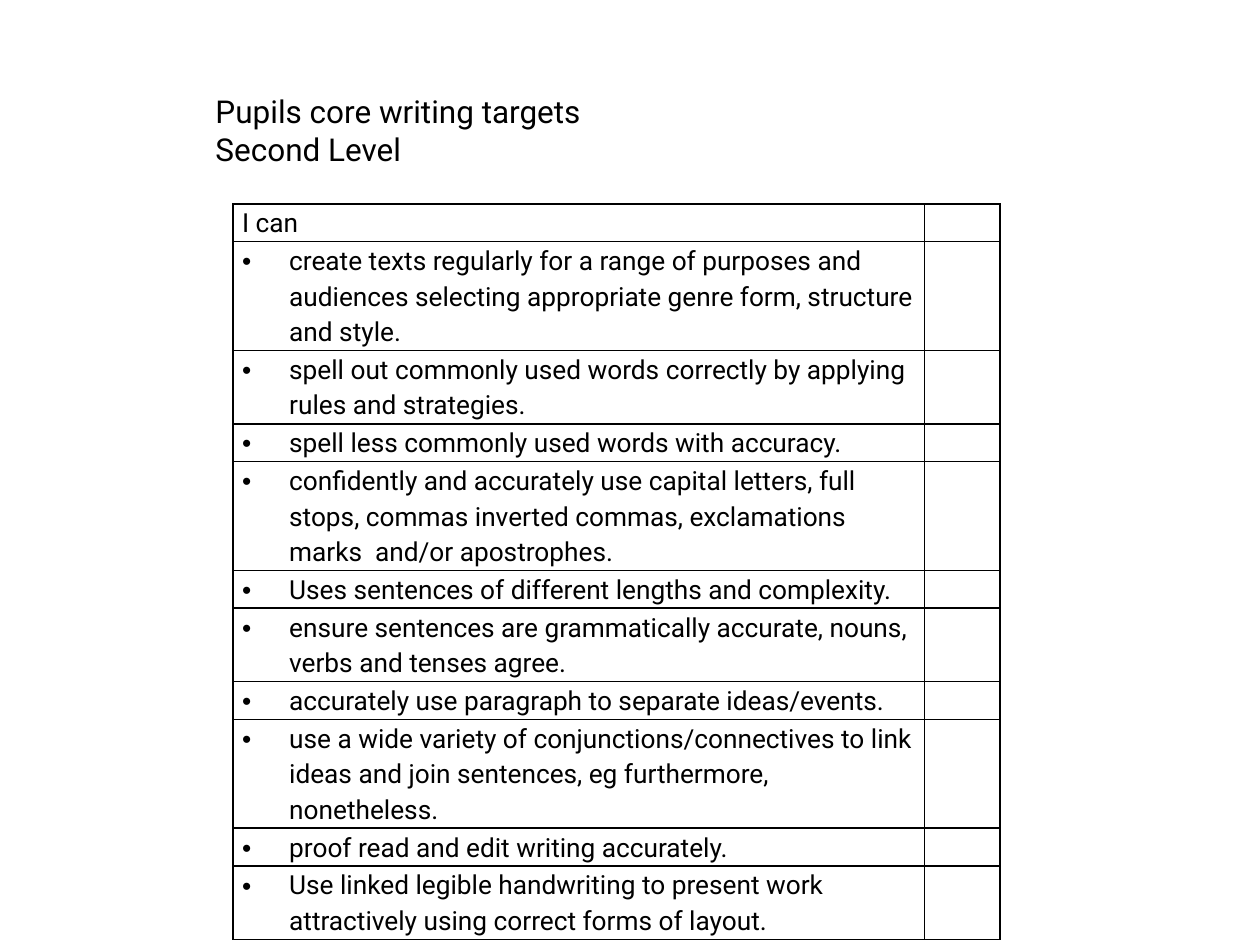
from lxml.etree import SubElement
from pptx import Presentation
from pptx.dml.color import RGBColor
from pptx.enum.text import MSO_ANCHOR, MSO_AUTO_SIZE, PP_ALIGN
from pptx.oxml.ns import qn
from pptx.util import Cm, Pt

COLOURS = {"ink": "000000", "border": "000000"}
FONT = "Roboto"
LINE_HEIGHT = 0.74
LINE_LENGTH = 55
COLUMN_WIDTHS = (13.94, 1.52)
INDENT = 0.95

TARGETS = [
    "create texts regularly for a range of purposes and audiences selecting "
    "appropriate genre form, structure and style.",
    "spell out commonly used words correctly by applying rules and strategies.",
    "spell less commonly used words with accuracy.",
    "confidently and accurately use capital letters, full stops, commas inverted "
    "commas, exclamations marks  and/or apostrophes.",
    "Uses sentences of different lengths and complexity.",
    "ensure sentences are grammatically accurate, nouns, verbs and tenses agree.",
    "accurately use paragraph to separate ideas/events.",
    "use a wide variety of conjunctions/connectives to link ideas and join "
    "sentences, eg furthermore, nonetheless.",
    "proof read and edit writing accurately.",
    "Use linked legible handwriting to present work attractively using correct "
    "forms of layout.",
]


def write(paragraph, text, size=15, spacing=1.0, bullet=None):
    """Fill a paragraph with one formatted run."""
    paragraph.alignment = PP_ALIGN.LEFT
    paragraph.line_spacing = spacing
    if bullet:
        properties = paragraph._p.get_or_add_pPr()
        properties.set("marL", str(Cm(INDENT)))
        properties.set("indent", str(-Cm(INDENT)))
        SubElement(properties, qn("a:buFont"), typeface="Arial")
        SubElement(properties, qn("a:buChar"), char=bullet)
    run = paragraph.add_run()
    run.text = text
    run.font.size = Pt(size)
    run.font.name = FONT
    run.font.color.rgb = RGBColor.from_string(COLOURS["ink"])


class TargetSheet:
    def __init__(self, slide, border_width=1):
        self.slide = slide
        self.border_width = border_width

    def title(self, lines, left, top, width, height):
        heading = self.slide.shapes.title
        heading.left, heading.top = Cm(left), Cm(top)
        heading.width, heading.height = Cm(width), Cm(height)
        frame = heading.text_frame
        frame.word_wrap = True
        frame.auto_size = MSO_AUTO_SIZE.SHAPE_TO_FIT_TEXT
        frame.vertical_anchor = MSO_ANCHOR.TOP
        for index, line in enumerate(lines):
            paragraph = frame.add_paragraph() if index else frame.paragraphs[0]
            write(paragraph, line, size=18)

    def format_cell(self, cell):
        cell.margin_left = cell.margin_right = Cm(0.18)
        cell.margin_top = cell.margin_bottom = 0
        properties = cell._tc.get_or_add_tcPr()
        for side in ("a:lnL", "a:lnR", "a:lnT", "a:lnB"):
            border = SubElement(properties, qn(side), w=str(Pt(self.border_width)))
            fill = SubElement(border, qn("a:solidFill"))
            SubElement(fill, qn("a:srgbClr"), val=COLOURS["border"])
        cell.fill.background()

    def checklist(self, header, targets, left, top):
        texts = [header, *targets]
        heights = [LINE_HEIGHT * (2 if len(text) > LINE_LENGTH else 1) for text in texts]
        table = self.slide.shapes.add_table(
            len(texts), len(COLUMN_WIDTHS), Cm(left), Cm(top),
            Cm(sum(COLUMN_WIDTHS)), Cm(sum(heights))).table
        table.first_row = table.horz_banding = False
        for column, width in zip(table.columns, COLUMN_WIDTHS):
            column.width = Cm(width)
        for index, (text, height) in enumerate(zip(texts, heights)):
            table.rows[index].height = Cm(height)
            write(table.cell(index, 0).text_frame.paragraphs[0], text,
                  spacing=1.15, bullet="•" if index else None)
        for cell in table.iter_cells():
            self.format_cell(cell)


def main():
    presentation = Presentation()
    presentation.slide_width, presentation.slide_height = Cm(25.4), Cm(19.05)
    sheet = TargetSheet(presentation.slides.add_slide(presentation.slide_layouts[5]))

    # Heading
    sheet.title(["Pupils core writing targets", "Second Level"], 4.09, 1.73, 14.81, 1.8)

    # Targets with a column to tick
    sheet.checklist("I can", TARGETS, 4.7, 4.11)

    presentation.save("out.pptx")


if __name__ == "__main__":
    main()
